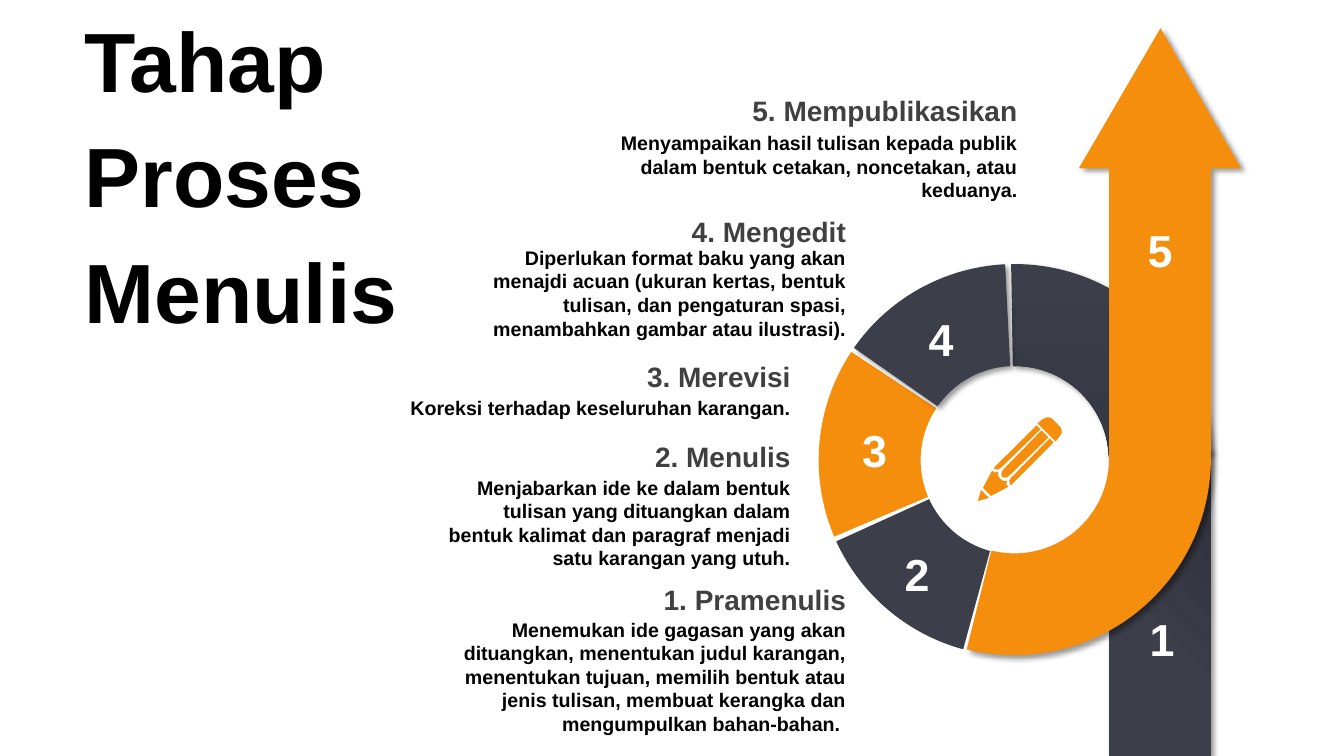
"""Build a slide on the five stages of the writing process."""
import math

from lxml import etree
from pptx import Presentation
from pptx.dml.color import RGBColor
from pptx.enum import shapes, text
from pptx.oxml import ns
from pptx.util import Inches, Pt

FONT = "Arial"
ORANGE = RGBColor(0xF4, 0x8E, 0x0C)
SLATE = RGBColor(0x3C, 0x3E, 0x4A)
DARK_SLATE = RGBColor(0x2D, 0x2E, 0x38)
HEADING_GREY = RGBColor(0x40, 0x40, 0x40)
BLACK = RGBColor(0, 0, 0)
WHITE = RGBColor(0xFF, 0xFF, 0xFF)

TITLE = "Tahap Proses Menulis"

# heading, body, right edge, heading top, body top, width
STAGES = [
    ("1. Pramenulis",
     "Menemukan ide gagasan yang akan dituangkan, menentukan judul karangan, "
     "menentukan tujuan, memilih bentuk atau jenis tulisan, membuat kerangka "
     "dan mengumpulkan bahan-bahan. ", 8.49, 5.73, 6.08, 4.22),
    ("2. Menulis",
     "Menjabarkan ide ke dalam bentuk tulisan yang dituangkan dalam bentuk "
     "kalimat dan paragraf menjadi satu karangan yang utuh.", 7.94, 4.31, 4.67, 3.65),
    ("3. Merevisi",
     "Koreksi terhadap keseluruhan karangan.", 7.94, 3.52, 3.88, 4.07),
    ("4. Mengedit",
     "Diperlukan format baku yang akan menajdi acuan (ukuran kertas, bentuk "
     "tulisan, dan pengaturan spasi, menambahkan gambar atau ilustrasi).",
     8.49, 2.08, 2.39, 4.07),
    ("5. Mempublikasikan",
     "Menyampaikan hasil tulisan kepada publik dalam bentuk cetakan, "
     "noncetakan, atau keduanya.", 10.19, 0.88, 1.25, 4.18),
]
NUMBERS = [("1", 10.97, 6.02), ("2", 8.54, 5.37), ("3", 8.12, 4.14),
           ("4", 8.78, 3.04), ("5", 10.95, 2.16)]

RING_BOX = (8.12, 2.62, 3.89, 3.89)
# rotation, start and end adjustments, colour, shadow
RING_SEGMENTS = [
    (285, 108.15, 138.31, SLATE, False),
    (337, 108.04, 141.9, ORANGE, False),
    (36, 107.35, 138.7, SLATE, True),
]
BAND = 0.26

HOOK_CENTRE = (10.06, 4.55)
HOOK_OUTER, HOOK_INNER, HOOK_SWEEP = 1.95, 0.94, 104
ARROW_HEAD = [(11, 1.67), (10.7, 1.67), (11.51, 0.28), (12.31, 1.67), (12.01, 1.67)]

PENCIL = [
    [(9.73, 4.86), (9.81, 4.94), (9.7, 4.97)],
    [(9.84, 4.67), (9.87, 4.69), (9.9, 4.68), (9.9, 4.72), (9.92, 4.75),
     (9.95, 4.77), (9.99, 4.77), (9.98, 4.8), (10, 4.83), (9.83, 4.92), (9.75, 4.84)],
    [(10.41, 4.35), (10.45, 4.39), (10.03, 4.81), (10.02, 4.81), (10.01, 4.77),
     (10.03, 4.74)],
    [(10.33, 4.27), (10.4, 4.34), (10.01, 4.72), (9.98, 4.74), (9.94, 4.73),
     (9.93, 4.7), (9.95, 4.66)],
    [(10.28, 4.22), (10.32, 4.26), (9.93, 4.64), (9.9, 4.66), (9.86, 4.65), (9.86, 4.64)],
    [(10.38, 4.14), (10.41, 4.14), (10.43, 4.15), (10.52, 4.24), (10.53, 4.27),
     (10.53, 4.3), (10.51, 4.33), (10.47, 4.38), (10.29, 4.2), (10.34, 4.16)],
]


def finish(shape, colour=None, shadow=False):
    shape.shadow.inherit = False
    shape.line.fill.background()
    if colour is not None:
        shape.fill.solid()
        shape.fill.fore_color.rgb = colour
    if shadow:
        effects = shape._element.spPr.find(ns.qn("a:effectLst"))
        outer = etree.SubElement(effects, ns.qn("a:outerShdw"), blurRad=str(Pt(4)),
                                 dist=str(Pt(3)), dir="2700000", algn="tl", rotWithShape="0")
        tint = etree.SubElement(outer, ns.qn("a:srgbClr"), val="000000")
        etree.SubElement(tint, ns.qn("a:alpha"), val="40000")


def shade(shape, angle, start):
    shape.fill.gradient()
    shape.fill.gradient_angle = angle
    for stop, colour, position in zip(shape.fill.gradient_stops,
                                      (SLATE, DARK_SLATE), (start, 1)):
        stop.color.rgb = colour
        stop.position = position


def add_segment(parent, rotation, start, end):
    segment = parent.add_shape(shapes.MSO_SHAPE.BLOCK_ARC, *map(Inches, RING_BOX))
    segment.rotation = rotation
    for index, value in enumerate((start, end, BAND)):
        segment.adjustments[index] = value
    return segment


def add_outline(parent, contours):
    contours = [[(Inches(x), Inches(y)) for x, y in contour] for contour in contours]
    builder = parent.build_freeform(*contours[0][0])
    for index, contour in enumerate(contours):
        if index:
            builder.move_to(*contour[0])
        builder.add_line_segments(contour[1:], close=True)
    return builder.convert_to_shape()


def hook_arc(radius):
    centre_x, centre_y = HOOK_CENTRE
    angles = [math.radians(degree) for degree in range(0, HOOK_SWEEP + 1, 2)]
    return [(centre_x + radius * math.cos(a), centre_y + radius * math.sin(a)) for a in angles]


def add_text(parent, words, box, size, colour, alignment, grow=True):
    label = parent.add_textbox(*map(Inches, box))
    frame = label.text_frame
    frame.word_wrap = True
    if grow:
        frame.auto_size = text.MSO_AUTO_SIZE.SHAPE_TO_FIT_TEXT
    frame.text = words
    paragraph = frame.paragraphs[0]
    paragraph.alignment = alignment
    font = paragraph.runs[0].font
    font.name, font.size, font.bold = FONT, Pt(size), True
    font.color.rgb = colour
    return frame


def main():
    presentation = Presentation()
    presentation.slide_width, presentation.slide_height = Inches(13.33), Inches(7.5)
    slide = presentation.slides.add_slide(presentation.slide_layouts[6])
    align = text.PP_ALIGN

    road = slide.shapes.add_group_shape().shapes
    back_arc = add_segment(road, 90, 107.35, 160.74)
    shade(back_arc, 0, 0)
    finish(back_arc, shadow=True)
    stem = road.add_shape(shapes.MSO_SHAPE.RECTANGLE, *map(Inches, (11, 4.46, 1.01, 3.04)))
    shade(stem, 45, 0.38)
    finish(stem, shadow=True)
    arrow = ARROW_HEAD + hook_arc(HOOK_OUTER) + hook_arc(HOOK_INNER)[::-1]
    finish(add_outline(road, [arrow]), ORANGE, True)
    for rotation, start, end, colour, shadow in RING_SEGMENTS:
        finish(add_segment(road, rotation, start, end), colour, shadow)

    for heading, body, right, heading_top, body_top, width in STAGES:
        stage = slide.shapes.add_group_shape().shapes
        lines = round((7.36 - 6.08) / 5, 2)
        add_text(stage, body, (right - width, body_top, width, 4 * lines), 14, BLACK, align.RIGHT)
        add_text(stage, heading, (right - width, heading_top, width, 0.44), 20,
                 HEADING_GREY, align.RIGHT)
    for number, left, top in NUMBERS:
        add_text(slide.shapes, number, (left, top, 1.11, 0.64), 32, WHITE, align.CENTER)

    title = add_text(slide.shapes, TITLE, (0.74, 0.63, 3.39, 2.05), 60, BLACK, align.LEFT, False)
    title.vertical_anchor = text.MSO_ANCHOR.MIDDLE
    title.paragraphs[0].line_spacing = 1.15
    finish(add_outline(slide.shapes, PENCIL), ORANGE)
    presentation.save("out.pptx")


if __name__ == "__main__":
    main()
